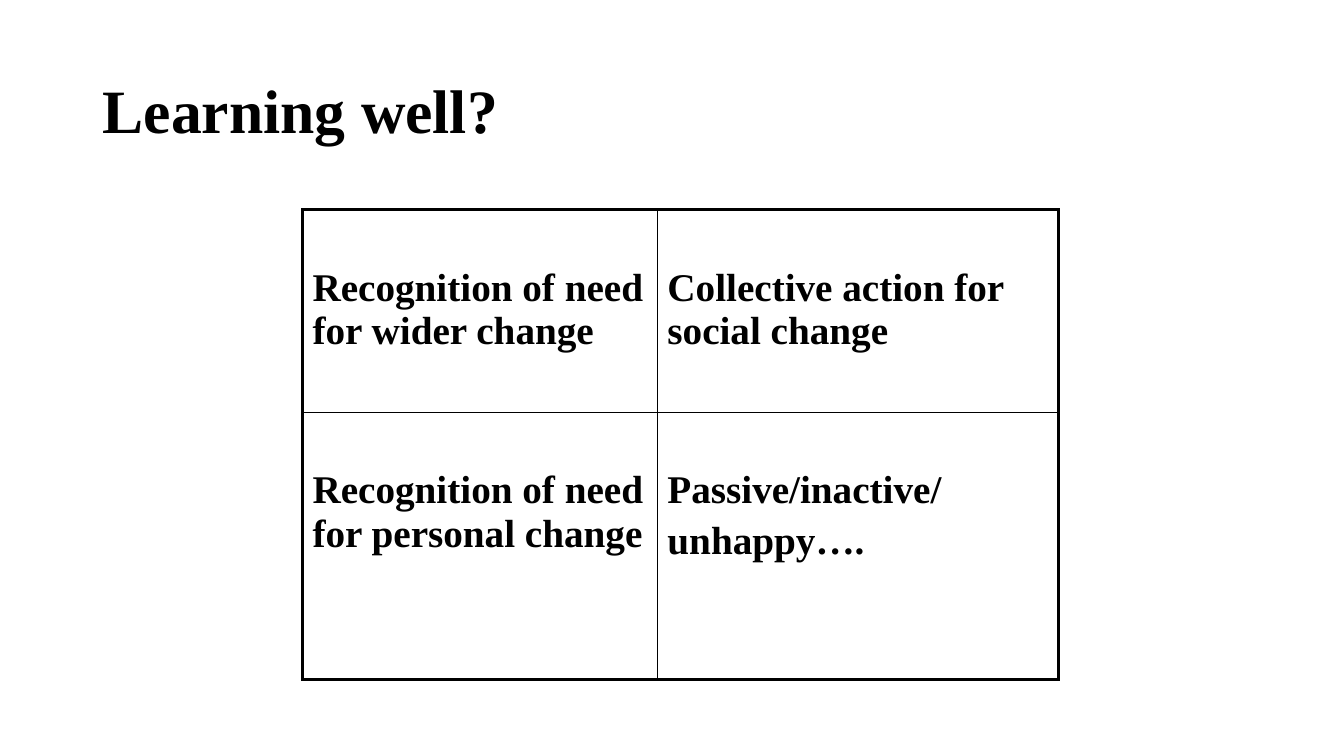
import pptx
import pptx.dml.color
import pptx.enum.text
import pptx.oxml
import pptx.oxml.ns
import pptx.util
from pptx.util import Inches

BLACK = pptx.dml.color.RGBColor(0x00, 0x00, 0x00)
FONT = "Times New Roman"
OUTER, INNER = 2.25, 1
COLUMN_WIDTHS = [3.52, 3.98]
ROW_HEIGHTS = [2.01, 2.65]
QUADRANTS = [
    ["Recognition of need for wider change", "Collective action for social change"],
    ["Recognition of need for personal change", "Passive/inactive/\nunhappy…."],
]


def write(tf, text, size, color=BLACK, bold=True, gap=0, line_spacing=None):
    """Fill a text frame, one paragraph per line, with gap points between them."""
    for i, line in enumerate(text.split("\n")):
        p = tf.add_paragraph() if i else tf.paragraphs[0]
        p.space_before = pptx.util.Pt(gap if i else 0)
        p.line_spacing = line_spacing
        r = p.add_run()
        r.text = line
        r.font.name = FONT
        r.font.size = pptx.util.Pt(size)
        r.font.bold = bold
        r.font.color.rgb = color


def set_borders(cell, widths):
    """Draw the left, right, top and bottom borders, with widths in points."""
    tcPr = cell._tc.get_or_add_tcPr()
    for i, (side, width) in enumerate(zip("LRTB", widths)):
        ln = pptx.oxml.parse_xml(
            f'<a:ln{side} {pptx.oxml.ns.nsdecls("a")} w="{pptx.util.Pt(width)}">'
            f'<a:solidFill><a:srgbClr val="{BLACK}"/></a:solidFill></a:ln{side}>'
        )
        tcPr.insert(i, ln)


prs = pptx.Presentation()
prs.slide_width, prs.slide_height = Inches(13.33), Inches(7.5)
slide = prs.slides.add_slide(prs.slide_layouts[5])

title = slide.shapes.title
title.left, title.top = Inches(0.92), Inches(0.4)
title.width, title.height = Inches(11.5), Inches(1.45)
title.text_frame.vertical_anchor = pptx.enum.text.MSO_ANCHOR.MIDDLE
write(title.text_frame, "Learning well?", 44, line_spacing=0.9)
title.text_frame.paragraphs[0].alignment = pptx.enum.text.PP_ALIGN.LEFT

table = slide.shapes.add_table(
    2, 2, Inches(3), Inches(2.08), Inches(sum(COLUMN_WIDTHS)), Inches(sum(ROW_HEIGHTS))
).table
table.first_row = table.horz_banding = False
for column, width in zip(table.columns, COLUMN_WIDTHS):
    column.width = Inches(width)
for row, height in zip(table.rows, ROW_HEIGHTS):
    row.height = Inches(height)

for i, row in enumerate(QUADRANTS):
    for j, text in enumerate(row):
        cell = table.cell(i, j)
        cell.margin_top = Inches(0.56)
        cell.fill.background()
        write(cell.text_frame, text, 28, gap=5.6)
        edges = [j == 0, j == 1, i == 0, i == 1]
        set_borders(cell, [OUTER if edge else INNER for edge in edges])

prs.save("out.pptx")
